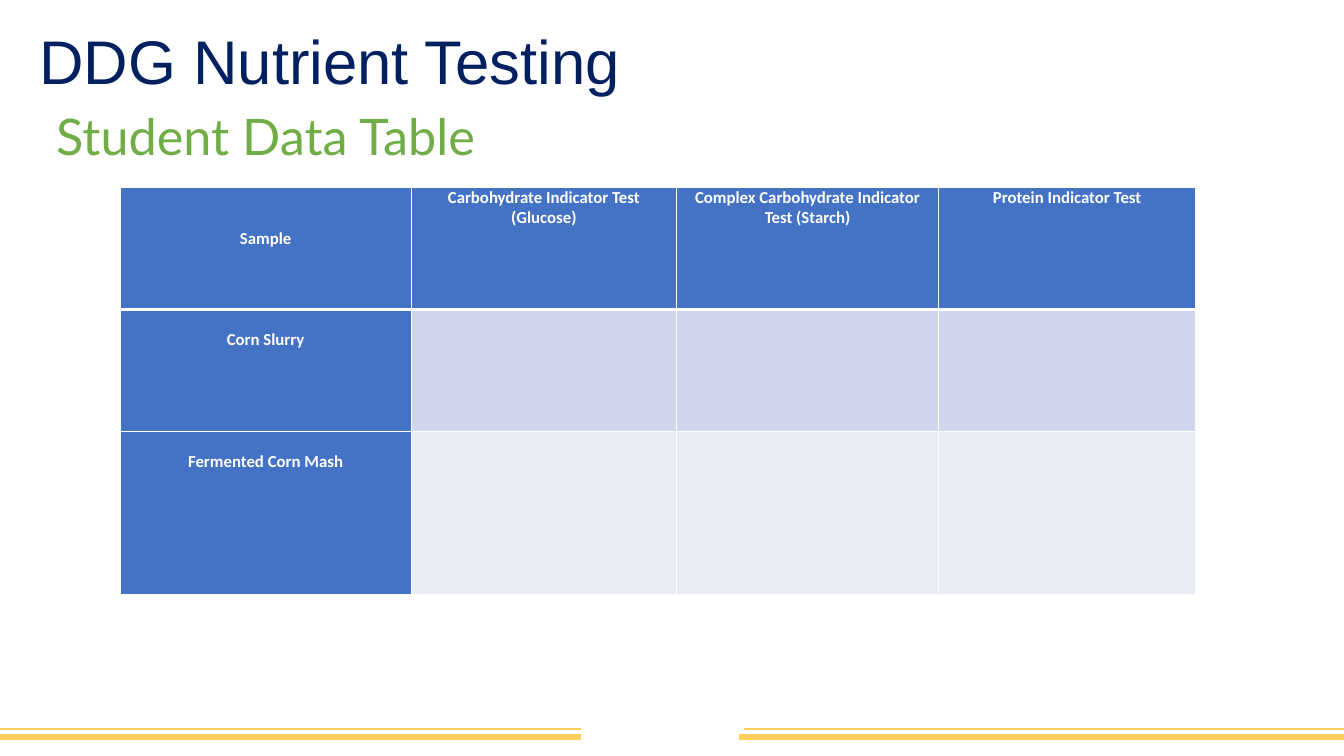
from dataclasses import dataclass

from lxml.etree import SubElement
from pptx import Presentation
from pptx.dml.color import RGBColor
from pptx.enum.shapes import MSO_CONNECTOR as Connector
from pptx.enum.text import MSO_ANCHOR as Anchor, MSO_AUTO_SIZE as AutoSize, PP_ALIGN as Align
from pptx.oxml.ns import qn
from pptx.util import Inches, Pt

COLORS = {
    "navy": "002060",
    "green": "70AD47",
    "gold": "FFD05B",
    "blue": "4472C4",
    "band_dark": "CFD5EA",
    "band_light": "E9EBF5",
    "white": "FFFFFF",
}


@dataclass
class Rule:
    left: float
    right: float
    y: float
    weight: float


@dataclass
class Heading:
    text: str
    left: float
    top: float
    size: int
    font: str
    color: str


@dataclass
class Row:
    height: float
    texts: list[str]
    label_top: float  # top margin above the row label
    fills: list[str]


RULES = [
    Rule(7.33, 13.33, 7.31, 4.5),
    Rule(0, 5.76, 7.31, 4.5),
    Rule(0, 5.76, 7.23, 1.5),
    Rule(7.38, 13.33, 7.23, 1.5),
]
TITLE = Heading("DDG Nutrient Testing", 0.29, 0.2, 44, "Arial", "navy")
SUBTITLE = Heading("Student Data Table", 0.46, 0.94, 36, "Lato", "green")
COLUMN_WIDTHS = [2.89, 2.63, 2.6, 2.55]
ROWS = [
    Row(1.21, ["Sample", "Carbohydrate Indicator Test (Glucose)",
               "Complex Carbohydrate Indicator Test (Starch)",
               "Protein Indicator Test"], 0.41, ["blue"] * 4),
    Row(1.21, ["Corn Slurry", "", "", ""], 0.2, ["blue"] + ["band_dark"] * 3),
    Row(1.62, ["Fermented Corn Mash", "", "", ""], 0.2, ["blue"] + ["band_light"] * 3),
]


def color(name: str) -> RGBColor:
    return RGBColor.from_string(COLORS[name])


def add_rule(slide, rule: Rule) -> None:
    line = slide.shapes.add_connector(Connector.STRAIGHT, Inches(rule.left), Inches(rule.y),
                                      Inches(rule.right), Inches(rule.y))
    line.line.color.rgb = color("gold")
    line.line.width = Pt(rule.weight)
    SubElement(line._element.spPr, qn("a:effectLst"))


def write_heading(box, heading: Heading) -> None:
    box.left, box.top = Inches(heading.left), Inches(heading.top)
    box.width, box.height = Inches(10.03), Inches(0.88)
    frame = box.text_frame
    frame.word_wrap = True
    frame.auto_size = AutoSize.NONE
    frame.vertical_anchor = Anchor.MIDDLE
    frame.text = heading.text
    para = frame.paragraphs[0]
    para.alignment = Align.LEFT
    para.line_spacing = 0.9
    para.font.size = Pt(heading.size)
    para.font.name = heading.font
    para.font.color.rgb = color(heading.color)


def set_borders(cell, top: float, bottom: float) -> None:
    properties = cell._tc.get_or_add_tcPr()
    for side, weight in {"L": 1, "R": 1, "T": top, "B": bottom}.items():
        line = SubElement(properties, qn(f"a:ln{side}"), w=str(Pt(weight)))
        fill = SubElement(line, qn("a:solidFill"))
        SubElement(fill, qn("a:srgbClr"), val=COLORS["white"])


def fill_cell(cell, text: str, fill: str, margin_top: float) -> None:
    cell.fill.solid()
    cell.fill.fore_color.rgb = color(fill)
    cell.margin_left = cell.margin_right = Inches(0.07)
    cell.margin_top, cell.margin_bottom = Inches(margin_top), 0
    cell.text = text
    para = cell.text_frame.paragraphs[0]
    para.alignment = Align.CENTER
    para.font.size = Pt(12)
    para.font.name = "Calibri"
    para.font.bold = True
    para.font.color.rgb = color("white")


def add_data_table(slide) -> None:
    frame = slide.shapes.add_table(len(ROWS), len(COLUMN_WIDTHS), Inches(1.19), Inches(1.86),
                                   Inches(sum(COLUMN_WIDTHS)),
                                   Inches(sum(row.height for row in ROWS)))
    table = frame.table
    table.first_col = True
    for column, width in zip(table.columns, COLUMN_WIDTHS):
        column.width = Inches(width)
    for r, row in enumerate(ROWS):
        table.rows[r].height = Inches(row.height)
        for c, (text, fill) in enumerate(zip(row.texts, row.fills)):
            cell = table.cell(r, c)
            set_borders(cell, top=3 if r == 1 else 1, bottom=3 if r == 0 else 1)
            fill_cell(cell, text, fill, row.label_top if c == 0 else 0)


def main() -> None:
    deck = Presentation()
    deck.slide_width, deck.slide_height = Inches(13.33), Inches(7.5)
    slide = deck.slides.add_slide(deck.slide_layouts[5])

    # Footer rules
    for rule in RULES:
        add_rule(slide, rule)

    # Student data table
    add_data_table(slide)

    # Headings
    write_heading(slide.shapes.title, TITLE)
    write_heading(slide.shapes.add_textbox(0, 0, 0, 0), SUBTITLE)

    deck.save("out.pptx")


if __name__ == "__main__":
    main()
